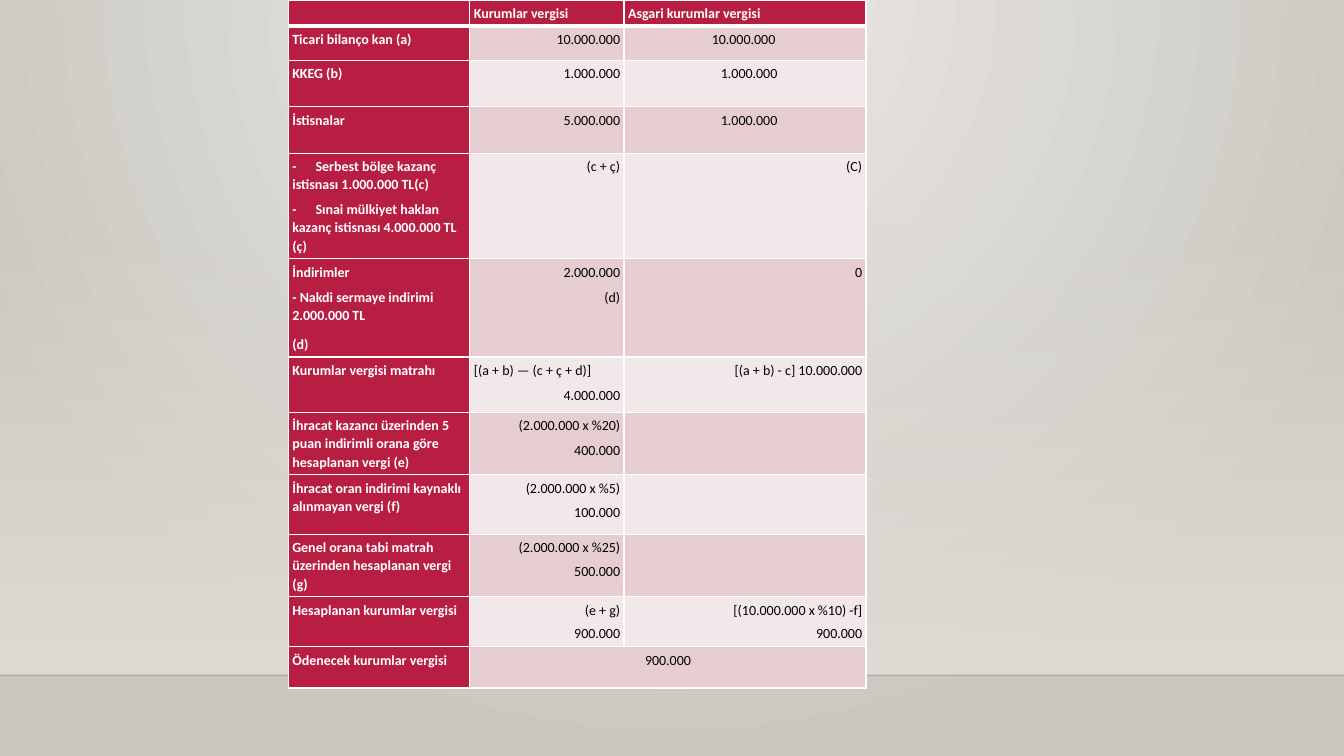
from lxml import etree
from pptx import Presentation
from pptx import util as u
from pptx.dml.color import RGBColor
from pptx.enum import shapes, text
from pptx.oxml.ns import qn

COLORS = {
    "white": "FFFFFF",
    "black": "000000",
    "crimson": "B71E42",
    "rose": "E6CDCF",
    "blush": "F3E8E9",
    "glow": "ECEAE7",
    "stone": "CAC7C1",
    "sand": "DFDBD5",
    "rule": "000001",
}
ALIGN = {
    "l": text.PP_ALIGN.LEFT,
    "r": text.PP_ALIGN.RIGHT,
    "c": text.PP_ALIGN.CENTER,
    "j": text.PP_ALIGN.JUSTIFY,
}
COLUMN_WIDTHS = [1.8, 1.53, 2.4]
ROW_HEIGHTS = [0.24, 0.34, 0.46, 0.46, 1, 0.94, 0.55, 0.61, 0.59, 0.59, 0.47, 0.41]


def line(words, align="l", after=7.5, indent=0):
    return words, align, after, indent


def right(*words, after=5):
    gaps = [after] * (len(words) - 1) + [7.5]
    return [line(item, "r", gap) for item, gap in zip(words, gaps)]


ROWS = [
    [[], [line("Kurumlar vergisi")], [line("Asgari kurumlar vergisi")]],
    [[line("Ticari bilanço kan (a)")], right("10.000.000"), [line("10.000.000", indent=0.83)]],
    [[line("KKEG (b)")], right("1.000.000"), [line("1.000.000", indent=0.92)]],
    [[line("İstisnalar")], right("5.000.000"), [line("1.000.000", indent=0.92)]],
    [
        [
            line("-\tSerbest bölge kazanç istisnası 1.000.000 TL(c)", after=5),
            line("-\tSınai mülkiyet haklan kazanç istisnası 4.000.000 TL (ç)"),
        ],
        right("(c + ç)"),
        right("(C)"),
    ],
    [
        [
            line("İndirimler", after=5),
            line("- Nakdi sermaye indirimi 2.000.000 TL"),
            line("(d)", after=3),
        ],
        right("2.000.000", "(d)"),
        right("0"),
    ],
    [
        [line("Kurumlar vergisi matrahı")],
        [line("[(a + b) — (c + ç + d)]", "j", 5), line("4.000.000", "r")],
        right("[(a + b) - c] 10.000.000"),
    ],
    [
        [line("İhracat kazancı üzerinden 5 puan indirimli orana göre hesaplanan vergi (e)")],
        right("(2.000.000 x %20)", "400.000"),
        [],
    ],
    [
        [line("İhracat oran indirimi kaynaklı alınmayan vergi (f)")],
        right("(2.000.000 x %5)", "100.000", after=4),
        [],
    ],
    [
        [line("Genel orana tabi matrah üzerinden hesaplanan vergi (g)")],
        right("(2.000.000 x %25)", "500.000", after=4),
        [],
    ],
    [
        [line("Hesaplanan kurumlar vergisi")],
        right("(e + g)", "900.000", after=4),
        right("[(10.000.000 x %10) -f]", "900.000", after=4),
    ],
    [[line("Ödenecek kurumlar vergisi")], [line("900.000", "c")], []],
]


def add(parent, tag, **attributes):
    return etree.SubElement(parent, qn(tag), {key: str(value) for key, value in attributes.items()})


class Slide:
    font = "Calibri"
    size = 10
    inset = 0.04

    def __init__(self, deck):
        self.page = deck.slides.add_slide(deck.slide_layouts[6])

    def gradient(self, owner, stops, focus=None):
        fill = owner.find(".//" + qn("a:gradFill"))
        for child in list(fill):
            fill.remove(child)
        stop_list = add(fill, "a:gsLst")
        for position, color, opacity in stops:
            stop = add(stop_list, "a:gs", pos=position * 1000)
            shade = add(stop, "a:srgbClr", val=COLORS[color])
            if opacity < 100:
                add(shade, "a:alpha", val=opacity * 1000)
        if focus:
            add(add(fill, "a:path", path="circle"), "a:fillToRect", **focus)
        else:
            add(fill, "a:lin", ang=5400000, scaled=0)

    def background(self):
        self.page.background.fill.gradient()
        focus = {"l": 43000, "t": 0, "r": 43000, "b": 100000}
        self.gradient(self.page.element, [(0, "glow", 100), (100, "stone", 100)], focus)

    def wall(self, left, top, width, height):
        box = self.page.shapes.add_shape(
            shapes.MSO_SHAPE.RECTANGLE, *map(u.Inches, (left, top, width, height))
        )
        box.shadow.inherit = False
        box.line.fill.background()
        box.fill.gradient()
        self.gradient(box.element, [(0, "sand", 0), (100, "sand", 100)])

    def horizon(self, left, right_end, top):
        rule = self.page.shapes.add_connector(
            shapes.MSO_CONNECTOR.STRAIGHT, *map(u.Inches, (left, top, right_end, top))
        )
        rule.line.width = u.Pt(1)
        rule.line.color.rgb = RGBColor.from_string(COLORS["rule"])
        add(rule.element.find(".//" + qn("a:srgbClr")), "a:alpha", val=20000)
        add(rule.element.spPr, "a:effectLst")

    def borders(self, cell, top, bottom):
        properties = cell._tc.get_or_add_tcPr()
        for side, width in (("L", 1), ("R", 1), ("T", top), ("B", bottom)):
            edge = add(properties, "a:ln" + side, w=u.Pt(width))
            add(add(edge, "a:solidFill"), "a:srgbClr", val=COLORS["white"])

    def cell_text(self, cell, lines, color, bold):
        frame = cell.text_frame
        frame.text = "\n".join(item[0] for item in lines)
        if not lines:
            add(frame.paragraphs[0]._p, "a:endParaRPr", sz=self.size * 100)
        for para, (words, align, after, indent) in zip(frame.paragraphs, lines):
            para.alignment = ALIGN[align]
            para.line_spacing = 1.07
            para.space_after = u.Pt(after)
            properties = para._p.get_or_add_pPr()
            if indent:
                properties.set("marL", str(u.Inches(indent)))
            if "\t" in words:
                add(add(properties, "a:tabLst"), "a:tab", pos=u.Inches(0.23), algn="l")
            for span in para.runs:
                span.font.name = self.font
                span.font.size = u.Pt(self.size)
                span.font.bold = bold
                span.font.color.rgb = RGBColor.from_string(COLORS[color])

    def table(self, left, top, rows):
        grid = self.page.shapes.add_table(
            len(ROW_HEIGHTS), len(COLUMN_WIDTHS), u.Inches(left), u.Inches(top),
            u.Inches(sum(COLUMN_WIDTHS)), u.Inches(sum(ROW_HEIGHTS)),
        ).table
        for column, width in zip(grid.columns, COLUMN_WIDTHS):
            column.width = u.Inches(width)
        for number, height in enumerate(ROW_HEIGHTS):
            grid.rows[number].height = u.Inches(height)
            for place, lines in enumerate(rows[number]):
                cell = grid.cell(number, place)
                heading = number == 0 or place == 0
                self.borders(cell, 3 if number == 1 else 1, 3 if number == 0 else 1)
                fill = "crimson" if heading else ("rose" if number % 2 else "blush")
                cell.fill.solid()
                cell.fill.fore_color.rgb = RGBColor.from_string(COLORS[fill])
                cell.margin_left = cell.margin_right = u.Inches(self.inset)
                cell.margin_top = cell.margin_bottom = u.Inches(self.inset)
                self.cell_text(cell, lines, "white" if heading else "black", heading)
        last = len(rows) - 1
        grid.cell(last, 1).merge(grid.cell(last, 2))


def main():
    deck = Presentation()
    deck.slide_width, deck.slide_height = u.Inches(13.33), u.Inches(7.5)
    slide = Slide(deck)
    slide.background()
    slide.wall(0, 2.21, 13.33, 4.49)
    slide.horizon(0, 13.33, 6.7)
    slide.table(2.86, 0, ROWS)
    deck.save("out.pptx")


if __name__ == "__main__":
    main()
